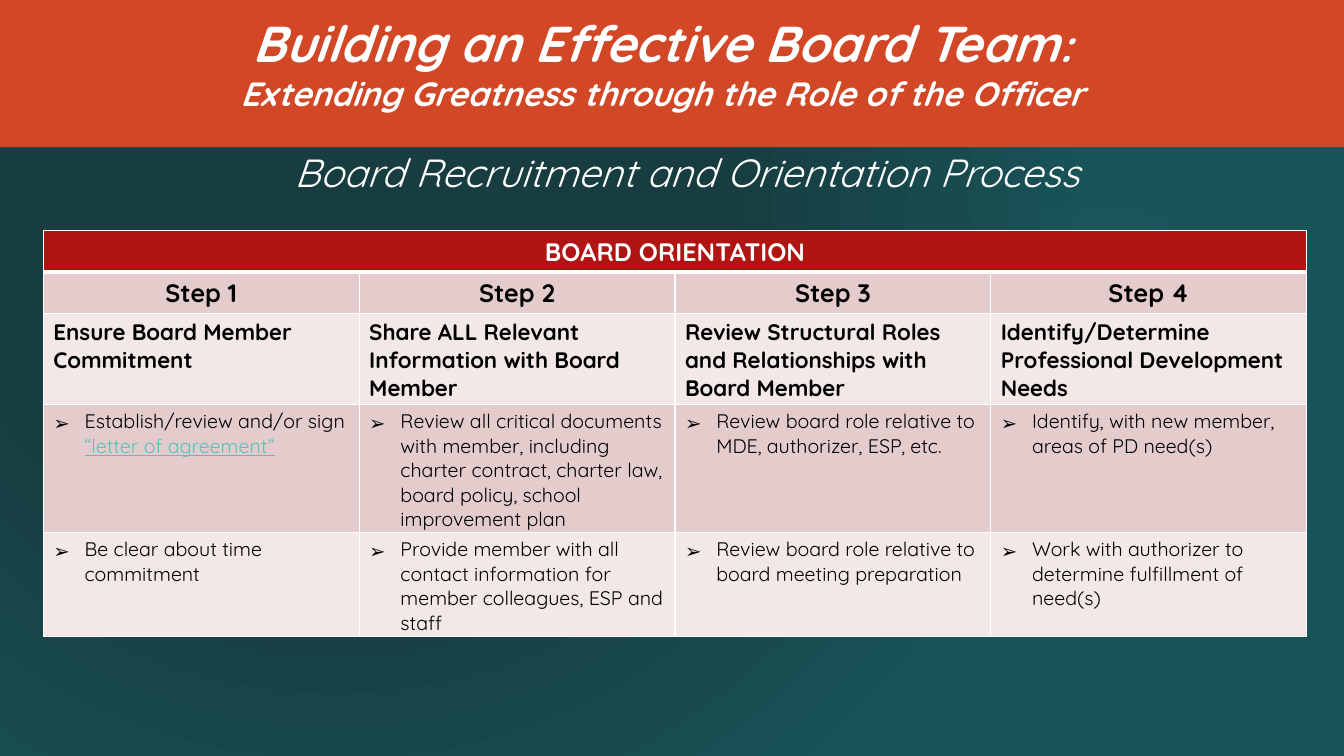
from lxml import etree
from pptx import Presentation
from pptx.dml.color import RGBColor
from pptx.enum.shapes import MSO_SHAPE
from pptx.enum.text import MSO_ANCHOR, PP_ALIGN
from pptx.oxml.ns import qn
from pptx.util import Inches, Pt

CENTER, LEFT = PP_ALIGN.CENTER, PP_ALIGN.LEFT
TOP = MSO_ANCHOR.TOP
RECTANGLE, OVAL = MSO_SHAPE.RECTANGLE, MSO_SHAPE.OVAL

COLORS = {
    "night": "173D40", "teal": "185358", "glow": "50B9C1",
    "orange": "D24726", "red": "B01513", "rose": "E4CCCC",
    "blush": "F2E8E7", "aqua": "58C1BA", "white": "FFFFFF", "black": "000000",
}
FONT = "Quicksand"
BREAK = "\v"

TITLE = {"size": 36, "bold": True, "italic": True, "color": "white"}
SUBTITLE = {"size": 28, "italic": True, "color": "white"}
HEADER = {"size": 18, "bold": True, "color": "white"}
STEP = {"size": 18, "bold": True, "color": "black"}
TASK = {"size": 16, "bold": True, "color": "black"}
DETAIL = {"size": 14, "bold": False, "color": "black"}
LETTER = {**DETAIL, "color": "aqua", "underline": True}

# Each row: height, fill, alignment, bulleted, text format, cell texts
ORIENTATION_ROWS = [
    (0.41, "red", CENTER, False, HEADER, ["BOARD ORIENTATION"]),
    (0.41, "rose", CENTER, False, STEP, [f"Step {number}" for number in range(1, 5)]),
    (0.9, "blush", LEFT, False, TASK, [
        "Ensure Board Member Commitment",
        "Share ALL Relevant Information with Board Member",
        "Review Structural Roles and Relationships with Board Member",
        "Identify/Determine Professional Development Needs",
    ]),
    (1.27, "rose", LEFT, True, DETAIL, [
        [("Establish/review and/or sign ", DETAIL), ("“letter of agreement”", LETTER)],
        "Review all critical documents with member, including charter contract, "
        "charter law, board policy, school improvement plan",
        "Review board role relative to MDE, authorizer, ESP, etc.",
        "Identify, with new member, areas of PD need(s)",
    ]),
    (1.03, "blush", LEFT, True, DETAIL, [
        "Be clear about time commitment",
        "Provide member with all contact information for member colleagues, ESP and staff",
        "Review board role relative to board meeting preparation",
        "Work with authorizer to determine fulfillment of need(s)",
    ]),
]


class SlideBuilder:
    def __init__(self, slide, font, colors):
        self.slide = slide
        self.font = font
        self.colors = colors

    def rgb(self, name):
        return RGBColor.from_string(self.colors[name])

    def radial(self, element, stops, focus):
        """Turn the gradient in element into a circular one."""
        gradient = element.find(".//" + qn("a:gradFill"))
        for child in list(gradient):
            gradient.remove(child)
        stop_list = etree.SubElement(gradient, qn("a:gsLst"))
        for position, color, opacity in stops:
            stop = etree.SubElement(stop_list, qn("a:gs"), pos=str(position * 1000))
            tint = etree.SubElement(stop, qn("a:srgbClr"), val=self.colors[color])
            if opacity < 100:
                etree.SubElement(tint, qn("a:alpha"), val=str(opacity * 1000))
        circle = etree.SubElement(gradient, qn("a:path"), path="circle")
        sides = {side: str(value * 1000) for side, value in zip("ltrb", focus)}
        etree.SubElement(circle, qn("a:fillToRect"), **sides)

    def background(self, stops, focus):
        self.slide.background.fill.gradient()
        self.radial(self.slide.element, stops, focus)

    def shape(self, kind, box):
        shape = self.slide.shapes.add_shape(kind, *map(Inches, box))
        shape.shadow.inherit = False
        shape.line.fill.background()
        return shape

    def banner(self, box, color):
        fill = self.shape(RECTANGLE, box).fill
        fill.solid()
        fill.fore_color.rgb = self.rgb(color)

    def glow(self, box, stops, focus):
        shape = self.shape(OVAL, box)
        shape.fill.gradient()
        self.radial(shape.element, stops, focus)

    def add_runs(self, paragraph, runs, alignment):
        paragraph.alignment = alignment
        for text, style in runs:
            if text == BREAK:
                paragraph.add_line_break()
                continue
            run = paragraph.add_run()
            run.text = text
            values = {**style, "name": self.font, "size": Pt(style["size"])}
            run.font.color.rgb = self.rgb(values.pop("color"))
            for name, value in values.items():
                setattr(run.font, name, value)

    def text(self, box, runs):
        frame = self.slide.shapes.add_textbox(*map(Inches, box)).text_frame
        frame.word_wrap = True
        frame.vertical_anchor = TOP
        self.add_runs(frame.paragraphs[0], runs, CENTER)

    def bullet(self, paragraph, symbol, indent):
        properties = paragraph._p.get_or_add_pPr()
        properties.set("marL", str(Inches(indent)))
        properties.set("indent", str(-Inches(indent)))
        etree.SubElement(properties, qn("a:buFont"), typeface="Noto Sans Symbols")
        etree.SubElement(properties, qn("a:buChar"), char=symbol)

    def borders(self, cell, widths):
        properties = cell._tc.get_or_add_tcPr()
        for side, width in widths.items():
            line = etree.SubElement(properties, qn(f"a:ln{side}"), w=str(Pt(width)))
            fill = etree.SubElement(line, qn("a:solidFill"))
            etree.SubElement(fill, qn("a:srgbClr"), val=self.colors["white"])

    def table(self, box, rows, column_count):
        frame = self.slide.shapes.add_table(len(rows), column_count, *map(Inches, box))
        table = frame.table
        table.horz_banding = False
        for index, (height, color, alignment, bulleted, style, texts) in enumerate(rows):
            table.rows[index].height = Inches(height)
            widths = {"L": 1, "R": 1, "T": 3 if index == 1 else 1, "B": 3 if index == 0 else 1}
            for column in range(column_count):
                cell = table.cell(index, column)
                self.borders(cell, widths)
                cell.fill.solid()
                cell.fill.fore_color.rgb = self.rgb(color)
            if len(texts) == 1:
                table.cell(index, 0).merge(table.cell(index, column_count - 1))
            for column, content in enumerate(texts):
                paragraph = table.cell(index, column).text_frame.paragraphs[0]
                if bulleted:
                    self.bullet(paragraph, "➢", 0.31)
                runs = [(content, style)] if isinstance(content, str) else content
                self.add_runs(paragraph, runs, alignment)


def main():
    presentation = Presentation()
    presentation.slide_width = Inches(13.33)
    presentation.slide_height = Inches(7.5)
    slide = presentation.slides.add_slide(presentation.slide_layouts[6])
    builder = SlideBuilder(slide, FONT, COLORS)

    builder.background([(48, "night", 100), (100, "teal", 100)], (50, 50, 100, 100))
    builder.glow((9.41, 1.83, 3.08, 3.08),
                 [(0, "glow", 7), (36, "glow", 6), (69, "glow", 0)], (50, 50, 50, 50))
    builder.banner((0, 0, 13.33, 1.46), "orange")
    builder.text((1.72, 0.07, 9.69, 1.92), [
        ("Building an Effective Board Team", TITLE),
        (":", {**TITLE, "size": 32}),
        (BREAK, TITLE),
        ("Extending Greatness through the Role of the Officer", {**TITLE, "size": 24}),
    ])
    builder.text((1.82, 1.42, 9.98, 0.57),
                 [("Board Recruitment and Orientation Process", SUBTITLE)])
    builder.table((0.43, 2.29, 12.53, 4.02), ORIENTATION_ROWS, 4)

    presentation.save("out.pptx")


if __name__ == "__main__":
    main()
